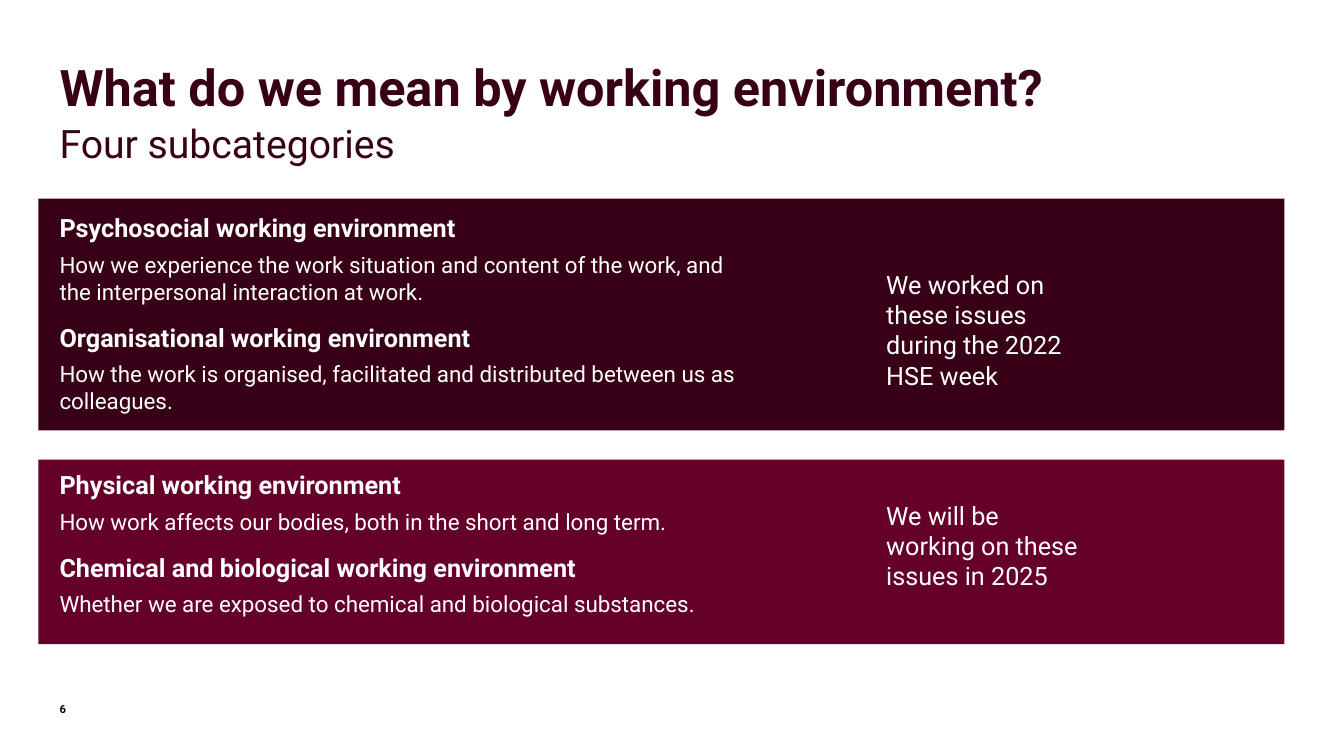
from pptx import Presentation
from pptx import util as u
from pptx.dml import color
from pptx.enum import shapes, text

FONT = "Roboto"
DARK, WINE, WHITE, BLACK = "380016", "650028", "FFFFFF", "000000"
TITLE = "What do we mean by working environment?"
SUBTITLE = "Four subcategories"
PAGE = "6"
BANDS = [
    dict(top=1.97, height=2.3, fill=DARK, note_top=2.67, note_height=1.2,
         note="We worked on these issues during the 2022 HSE week",
         topics=[
             ("Psychosocial working environment",
              "How we experience the work situation and content of the work, "
              "and the interpersonal interaction at work."),
             ("Organisational working environment",
              "How the work is organised, facilitated and distributed "
              "between us as colleagues."),
         ]),
    dict(top=4.56, height=1.83, fill=WINE, note_top=4.96, note_height=0.9,
         note="We will be working on these issues in 2025",
         topics=[
             ("Physical working environment",
              "How work affects our bodies, both in the short and long term."),
             ("Chemical and biological working environment",
              "Whether we are exposed to chemical and biological substances."),
         ]),
]
LEFT, BAND_LEFT, NOTE_LEFT = 0.59, 0.38, 8.79
WIDTH, BAND_WIDTH, NOTE_WIDTH = 12.15, 12.36, 2.03
BAND_GAP = 27.5


def rgb(value):
    return color.RGBColor.from_string(value)


def add_text(frame, words, size=18, fill=WHITE, bold=False, line=None, before=None, after=0):
    used = frame.paragraphs[0].runs
    paragraph = frame.add_paragraph() if used else frame.paragraphs[0]
    paragraph.space_after = u.Pt(after)
    if before:
        paragraph.space_before = u.Pt(before)
    if line:
        paragraph.line_spacing = line
    run = paragraph.add_run()
    run.text = words
    run.font.name, run.font.size, run.font.bold = FONT, u.Pt(size), bold
    run.font.color.rgb = rgb(fill)


def add_frame(slide, left, top, width, height, anchor=text.MSO_ANCHOR.TOP):
    frame = slide.shapes.add_textbox(*map(u.Inches, (left, top, width, height))).text_frame
    frame.margin_left = frame.margin_top = frame.margin_right = frame.margin_bottom = 0
    frame.word_wrap = True
    frame.vertical_anchor = anchor
    return frame


def add_band(slide, band):
    panel = slide.shapes.add_shape(
        shapes.MSO_SHAPE.RECTANGLE,
        *map(u.Inches, (BAND_LEFT, band["top"], BAND_WIDTH, band["height"])))
    panel.shadow.inherit = False
    panel.fill.solid()
    panel.fill.fore_color.rgb = rgb(band["fill"])
    panel.line.fill.background()


def main():
    deck = Presentation()
    deck.slide_width, deck.slide_height = u.Inches(13.33), u.Inches(7.5)
    slide = deck.slides.add_slide(deck.slide_layouts[6])

    for band in BANDS:
        add_band(slide, band)

    add_text(add_frame(slide, LEFT, 0.61, WIDTH, 1.17), TITLE,
             size=36, fill=DARK, bold=True, line=0.94)
    add_text(add_frame(slide, LEFT, 1.22, WIDTH, 0.55), SUBTITLE,
             size=28, fill=DARK, line=0.94, after=6)

    topics = add_frame(slide, LEFT, 2.11, 6.82, 4.49)
    for band_index, band in enumerate(BANDS):
        for topic_index, (heading, meaning) in enumerate(band["topics"]):
            starts_band = band_index > 0 and topic_index == 0
            add_text(topics, heading, bold=True, after=6,
                     before=BAND_GAP if starts_band else None)
            add_text(topics, meaning, size=16, after=12)

    add_text(add_frame(slide, LEFT, 6.9, 0.28, 0.2, text.MSO_ANCHOR.BOTTOM), PAGE,
             size=8, fill=BLACK, bold=True)

    for band in BANDS:
        note = add_frame(slide, NOTE_LEFT, band["note_top"], NOTE_WIDTH, band["note_height"])
        note.auto_size = text.MSO_AUTO_SIZE.SHAPE_TO_FIT_TEXT
        add_text(note, band["note"], after=6)

    deck.save("out.pptx")


if __name__ == "__main__":
    main()
